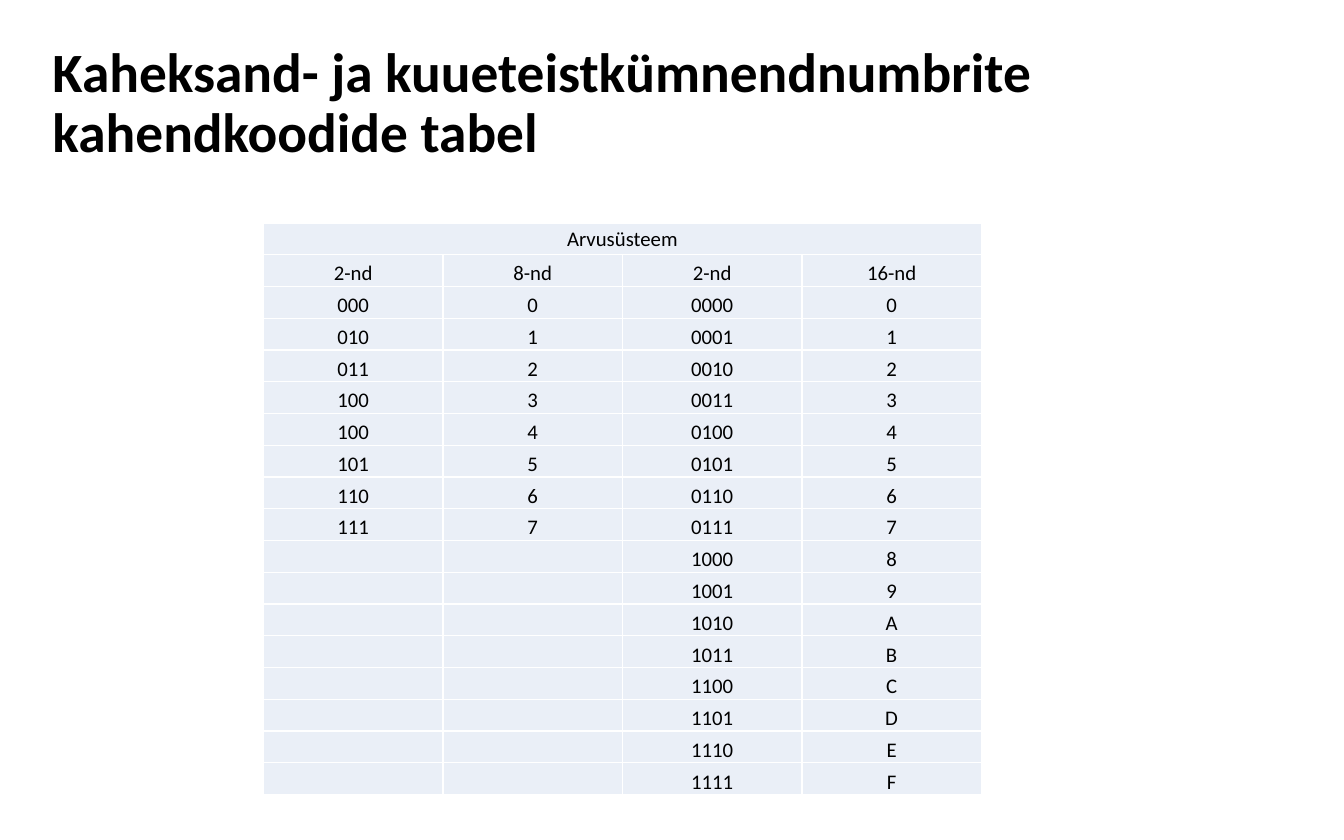
from dataclasses import dataclass
from itertools import zip_longest

from lxml.etree import SubElement
from pptx import Presentation
from pptx.dml.color import RGBColor
from pptx.enum.text import MSO_ANCHOR as Anchor, PP_ALIGN as Align
from pptx.oxml.ns import qn
from pptx.util import Inches, Pt


@dataclass(frozen=True)
class Theme:
    font: str = "Calibri"
    title_size: float = 37.4
    cell_size: float = 14
    border_width: float = 1
    text: str = "000000"
    cell_fill: str = "EAEFF7"
    border: str = "FFFFFF"


THEME = Theme()
CENTIMETRE = 1 / 2.54
SLIDE_WIDTH = 32 * CENTIMETRE
SLIDE_HEIGHT = 20 * CENTIMETRE
MARGIN = CENTIMETRE
TITLE = "Kaheksand- ja kuueteistkümnendnumbrite kahendkoodide tabel"
OCTAL_CODES = ["000", "010", "011", "100", "100", "101", "110", "111"]
OCTAL_ROWS = [(code, str(digit)) for digit, code in enumerate(OCTAL_CODES)]
HEX_ROWS = [(f"{digit:04b}", f"{digit:X}") for digit in range(16)]
CODE_ROWS = [
    octal + hexadecimal
    for octal, hexadecimal in zip_longest(OCTAL_ROWS, HEX_ROWS, fillvalue=("", ""))
]
TABLE_ROWS = [
    ("Arvusüsteem", "", "", ""),
    ("2-nd", "8-nd", "2-nd", "16-nd"),
    *CODE_ROWS,
]


def style_font(font, size, bold=False):
    font.name = THEME.font
    font.size = Pt(size)
    font.bold = bold
    font.color.rgb = RGBColor.from_string(THEME.text)


def add_title(slide, left, top, width, height):
    shape = slide.shapes.add_textbox(
        Inches(left), Inches(top), Inches(width), Inches(height)
    )
    frame = shape.text_frame
    frame.word_wrap = True
    frame.vertical_anchor = Anchor.MIDDLE
    paragraph = frame.paragraphs[0]
    paragraph.text = TITLE
    paragraph.line_spacing = 0.9
    style_font(paragraph.font, THEME.title_size, bold=True)


def add_borders(cell):
    properties = cell._tc.get_or_add_tcPr()
    for side in ("a:lnL", "a:lnR", "a:lnT", "a:lnB"):
        line = SubElement(properties, qn(side), w=str(Pt(THEME.border_width)))
        fill = SubElement(line, qn("a:solidFill"))
        SubElement(fill, qn("a:srgbClr"), val=THEME.border)


def style_cell(cell, text, anchor):
    add_borders(cell)
    cell.fill.solid()
    cell.fill.fore_color.rgb = RGBColor.from_string(THEME.cell_fill)
    cell.margin_left = cell.margin_right = cell.margin_top = Inches(0.01)
    cell.margin_bottom = 0
    cell.vertical_anchor = anchor
    paragraph = cell.text_frame.paragraphs[0]
    if text:
        paragraph.text = text
    paragraph.alignment = Align.CENTER
    style_font(paragraph.font, THEME.cell_size)


def add_code_table(slide, left, top, width, height):
    row_count, column_count = len(TABLE_ROWS), len(TABLE_ROWS[0])
    table = slide.shapes.add_table(
        row_count, column_count,
        Inches(left), Inches(top), Inches(width), Inches(height),
    ).table
    table.first_row = table.horz_banding = False
    for row_index, values in enumerate(TABLE_ROWS):
        anchor = Anchor.BOTTOM if row_index else Anchor.MIDDLE
        for column_index, text in enumerate(values):
            style_cell(table.cell(row_index, column_index), text, anchor)
    table.cell(0, 0).merge(table.cell(0, column_count - 1))


def main():
    presentation = Presentation()
    presentation.slide_width = Inches(SLIDE_WIDTH)
    presentation.slide_height = Inches(SLIDE_HEIGHT)
    slide = presentation.slides.add_slide(presentation.slide_layouts[6])
    add_title(slide, MARGIN, MARGIN, SLIDE_WIDTH - 2 * MARGIN, 3 * CENTIMETRE)
    add_code_table(slide, 2.47, 2.09, 6.73, 5.36)
    presentation.save("out.pptx")


if __name__ == "__main__":
    main()
